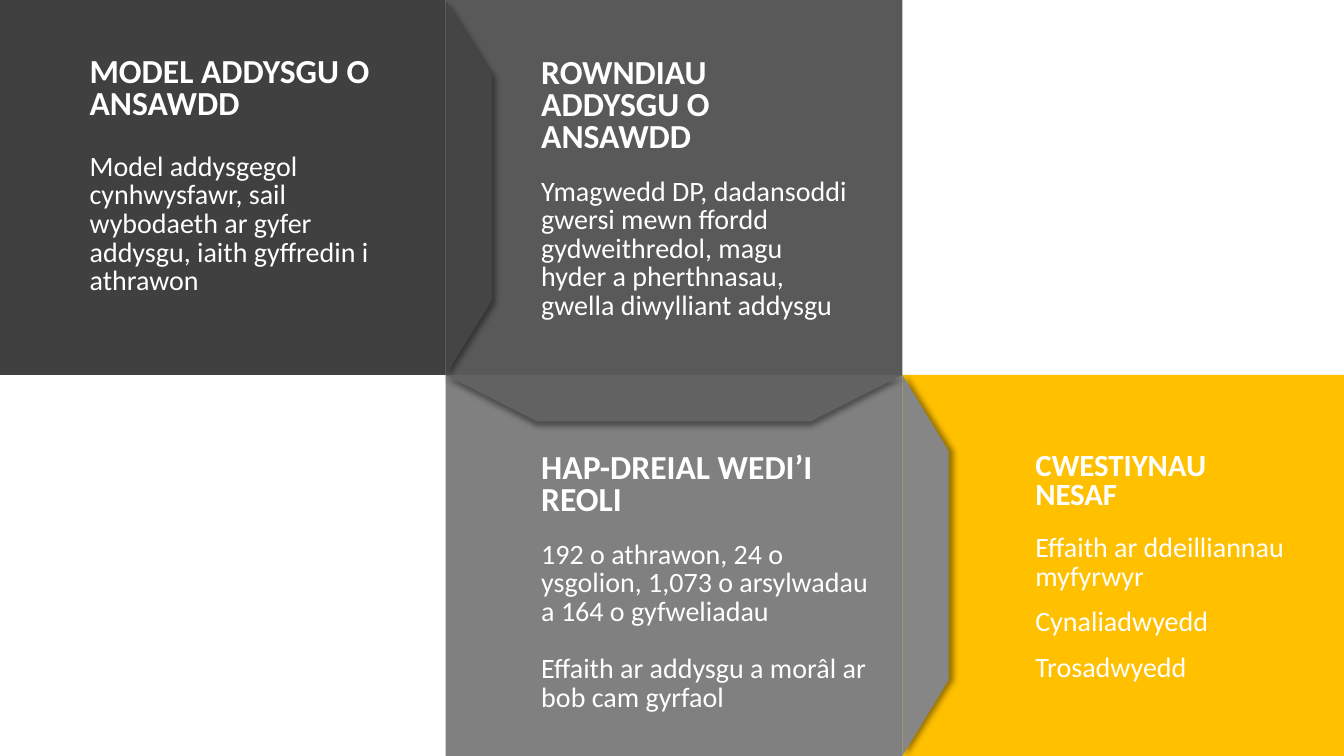
from lxml import etree
from pptx import Presentation
from pptx import util as u
from pptx.dml.color import RGBColor
from pptx.enum import shapes, text
from pptx.oxml import ns

WHITE = RGBColor(0xFF, 0xFF, 0xFF)
CHARCOAL = RGBColor(0x40, 0x40, 0x40)
DARK_GREY = RGBColor(0x59, 0x59, 0x59)
MID_GREY = RGBColor(0x80, 0x80, 0x80)
AMBER = RGBColor(0xFF, 0xC0, 0x00)
CHARCOAL_FLAP = RGBColor(0x45, 0x45, 0x45)
DARK_FLAP = RGBColor(0x62, 0x62, 0x62)
MID_FLAP = RGBColor(0x86, 0x86, 0x86)

SLIDE_W, SLIDE_H = 13.33, 7.5
MODEL_EDGE, TRIAL_EDGE, MIDDLE = 4.42, 8.95, 3.72
FLAP_DEPTH = 0.46

MODEL = (0, 0, MODEL_EDGE, MIDDLE)
ROUNDS = (MODEL_EDGE, 0, TRIAL_EDGE - MODEL_EDGE, MIDDLE)
TRIAL = (MODEL_EDGE, MIDDLE, TRIAL_EDGE - MODEL_EDGE, SLIDE_H - MIDDLE)
QUESTIONS = (TRIAL_EDGE, MIDDLE, SLIDE_W - TRIAL_EDGE, SLIDE_H - MIDDLE)


def add_filled(slide, preset, box, color):
    part = slide.shapes.add_shape(preset, *map(u.Inches, box))
    part.shadow.inherit = False
    part.fill.solid()
    part.fill.fore_color.rgb = color
    part.line.fill.background()
    return part


def cast_shadow(part, angle):
    effects = part._element.spPr.find(ns.qn("a:effectLst"))
    shadow = etree.SubElement(
        effects, ns.qn("a:outerShdw"), blurRad=str(u.Pt(4)), dist=str(u.Pt(3)),
        dir=str(angle * 60000), algn="ctr", rotWithShape="0")
    color = etree.SubElement(shadow, ns.qn("a:srgbClr"), val="000000")
    etree.SubElement(color, ns.qn("a:alpha"), val="40000")


def add_flap_right(slide, panel, color, shadow_angle):
    left, top, width, height = panel
    center_x = left + width + FLAP_DEPTH / 2
    center_y = top + height / 2
    box = (center_x - height / 2, center_y - FLAP_DEPTH / 2, height, FLAP_DEPTH)
    flap = add_filled(slide, shapes.MSO_SHAPE.FLOWCHART_MANUAL_OPERATION, box, color)
    flap.rotation = 270
    cast_shadow(flap, shadow_angle)


def add_flap_below(slide, panel, color, shadow_angle):
    left, top, width, height = panel
    box = (left, top + height, width, FLAP_DEPTH)
    flap = add_filled(slide, shapes.MSO_SHAPE.FLOWCHART_MANUAL_OPERATION, box, color)
    cast_shadow(flap, shadow_angle)


def add_story(slide, panel, inset, size, heading, details, gaps, heading_size=24):
    box = (panel[0] + inset[0], panel[1] + inset[1], *size)
    story = slide.shapes.add_textbox(*map(u.Inches, box)).text_frame
    story.word_wrap = True
    story.auto_size = text.MSO_AUTO_SIZE.SHAPE_TO_FIT_TEXT
    for index, wording in enumerate([heading, *details]):
        is_heading = index == 0
        paragraph = story.paragraphs[0] if is_heading else story.add_paragraph()
        paragraph.text = wording
        paragraph.line_spacing = 0.8 if is_heading else 0.85
        paragraph.space_before = u.Pt(0 if is_heading else gaps[index - 1])
        paragraph.font.name = "Calibri"
        paragraph.font.size = u.Pt(heading_size if is_heading else 20)
        paragraph.font.bold = is_heading
        paragraph.font.color.rgb = WHITE


def build_steps(slide):
    for panel, color in ((QUESTIONS, AMBER), (TRIAL, MID_GREY),
                         (ROUNDS, DARK_GREY), (MODEL, CHARCOAL)):
        add_filled(slide, shapes.MSO_SHAPE.RECTANGLE, panel, color)

    add_flap_right(slide, TRIAL, MID_FLAP, 0)
    add_flap_right(slide, MODEL, CHARCOAL_FLAP, 45)
    add_flap_below(slide, ROUNDS, DARK_FLAP, 90)

    add_story(slide, MODEL, (0.79, 0.52), (3.11, 2.49), "MODEL ADDYSGU O ANSAWDD",
              ["Model addysgegol cynhwysfawr, sail wybodaeth ar gyfer addysgu, "
               "iaith gyffredin i athrawon"], [22.6])
    add_story(slide, ROUNDS, (0.85, 0.53), (3.27, 2.73), "ROWNDIAU ADDYSGU O ANSAWDD",
              ["Ymagwedd DP, dadansoddi gwersi mewn ffordd gydweithredol, magu hyder "
               "a pherthnasau, gwella diwylliant addysgu"], [16.6])
    add_story(slide, TRIAL, (0.85, 0.73), (3.46, 2.7), "HAP-DREIAL WEDI’I REOLI",
              ["192 o athrawon, 24 o ysgolion, 1,073 o arsylwadau a 164 o gyfweliadau",
               "Effaith ar addysgu a morâl ar bob cam gyrfaol"], [16.6, 20.7])
    add_story(slide, QUESTIONS, (1.22, 0.72), (2.73, 2.41), "CWESTIYNAU NESAF",
              ["Effaith ar ddeilliannau myfyrwyr", "Cynaliadwyedd", "Trosadwyedd"],
              [16.6, 12, 12], heading_size=22)


def main():
    presentation = Presentation()
    presentation.slide_width = u.Inches(SLIDE_W)
    presentation.slide_height = u.Inches(SLIDE_H)
    build_steps(presentation.slides.add_slide(presentation.slide_layouts[6]))
    presentation.save("out.pptx")


if __name__ == "__main__":
    main()
